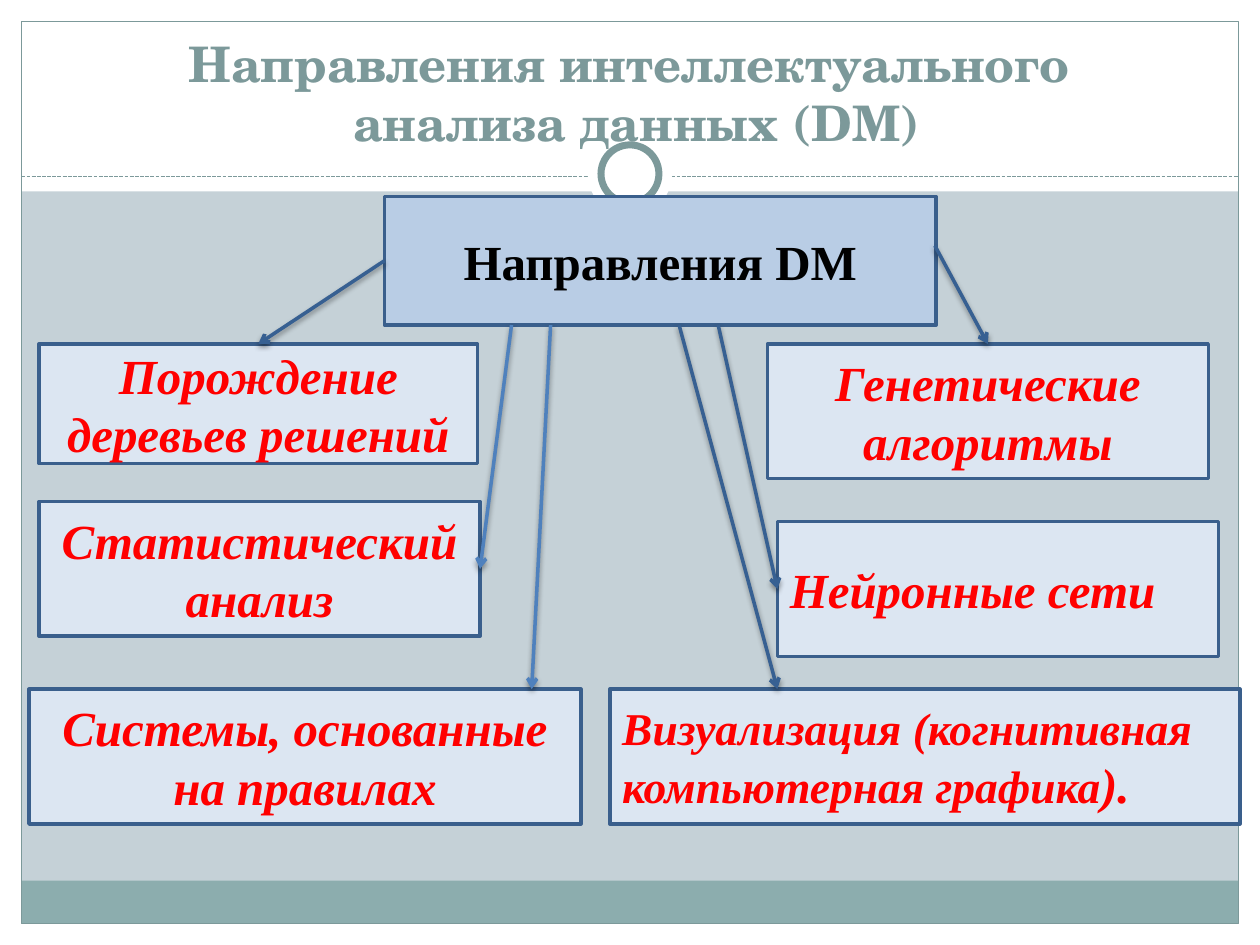
from dataclasses import dataclass

from lxml import etree
from pptx import Presentation, util as u
from pptx.dml.color import RGBColor
from pptx.enum import dml, shapes, text
from pptx.oxml.ns import qn

COLUMNS, ROWS = 10, 7.5
TOP, LEFT, BOTTOM, RIGHT = range(4)
CENTER, START = text.PP_ALIGN.CENTER, text.PP_ALIGN.LEFT


@dataclass(frozen=True)
class Theme:
    page: str = "C5D1D7"
    paper: str = "FFFFFF"
    band: str = "8CADAE"
    accent: str = "7C999A"
    hub: str = "B9CDE5"
    branch: str = "DCE6F2"
    outline: str = "3A5F8C"
    arrow: str = "376092"
    light_arrow: str = "4F81BD"
    shadow: str = "000000"
    hub_text: str = "000000"
    branch_text: str = "FF0000"
    title_font: str = "TeX Gyre Schola"
    body_font: str = "Times New Roman"
    size: float = 28
    small_size: float = 26
    hairline: float = 0.75
    stroke: float = 2
    ring: float = 4


THEME = Theme()


def grid(*lengths):
    return [u.Inches(length) for length in lengths]


def rgb(value):
    return RGBColor.from_string(value)


def set_line(line, color, width):
    line.color.rgb = rgb(color)
    line.width = u.Pt(width)


def add_panel(slide, area, fill=None, line=None, width=THEME.hairline,
              kind=shapes.MSO_SHAPE.RECTANGLE):
    panel = slide.shapes.add_shape(kind, *grid(*area))
    panel.shadow.inherit = False
    if fill:
        panel.fill.solid()
        panel.fill.fore_color.rgb = rgb(fill)
    else:
        panel.fill.background()
    if line:
        set_line(panel.line, line, width)
    else:
        panel.line.fill.background()
    return panel


def add_run(paragraph, words, font, color, size=THEME.size, italic=False):
    run = paragraph.add_run()
    run.text = words
    run.font.name = font
    run.font.size = u.Pt(size)
    run.font.bold = True
    run.font.italic = italic
    run.font.color.rgb = rgb(color)


def start_text(shape, anchor, align):
    frame = shape.text_frame
    frame.word_wrap = True
    frame.vertical_anchor = anchor
    paragraph = frame.paragraphs[0]
    paragraph.alignment = align
    return paragraph


def add_box(slide, area, runs, fill=THEME.branch, color=THEME.branch_text,
            italic=True, align=CENTER):
    box = add_panel(slide, area, fill, THEME.outline, THEME.stroke)
    paragraph = start_text(box, text.MSO_ANCHOR.MIDDLE, align)
    for words, size in runs:
        add_run(paragraph, words, THEME.body_font, color, size, italic)
    return box


def add_line(slide, start, end, color, width):
    line = slide.shapes.add_connector(shapes.MSO_CONNECTOR.STRAIGHT,
                                      *grid(*start, *end))
    set_line(line.line, color, width)
    effects = etree.SubElement(line._element.spPr, qn("a:effectLst"))
    return line, effects


def add_arrow(slide, start, end, color=THEME.arrow, source=None, target=None):
    arrow, effects = add_line(slide, start, end, color, THEME.stroke)
    etree.SubElement(arrow.line._get_or_add_ln(), qn("a:tailEnd"), type="arrow")
    shadow = etree.SubElement(effects, qn("a:outerShdw"), blurRad=str(u.Pt(3.1)),
                              dist=str(u.Pt(1.6)), dir="5400000", rotWithShape="0")
    shade = etree.SubElement(shadow, qn("a:srgbClr"), val=THEME.shadow)
    etree.SubElement(shade, qn("a:alpha"), val="38000")
    if source:
        arrow.begin_connect(*source)
    if target:
        arrow.end_connect(*target)


def add_backdrop(slide):
    slide.background.fill.solid()
    slide.background.fill.fore_color.rgb = rgb(THEME.page)
    margin = 0.17
    inner_width, inner_height = COLUMNS - 2 * margin, ROWS - 2 * margin
    for area in ((0, ROWS - margin, COLUMNS, margin), (0, 0, COLUMNS, 1.52),
                 (0, 0, margin, ROWS), (COLUMNS - margin, 0, margin, ROWS)):
        add_panel(slide, area, THEME.paper)
    add_panel(slide, (margin, 6.99, inner_width, 0.34), THEME.band)
    add_panel(slide, (margin, margin, inner_width, inner_height), line=THEME.accent)
    divider, _ = add_line(slide, (margin, 1.4), (COLUMNS - margin, 1.4),
                          THEME.accent, THEME.hairline)
    divider.line.dash_style = dml.MSO_LINE.SQUARE_DOT
    for diameter, line in ((0.67, None), (0.46, THEME.accent)):
        area = ((COLUMNS - diameter) / 2, 1.38 - diameter / 2, diameter, diameter)
        add_panel(slide, area, THEME.paper, line, THEME.ring, shapes.MSO_SHAPE.OVAL)


def add_title(slide, *lines):
    title = slide.shapes.add_textbox(*grid(0.33, 0.25, 9.33, 1))
    paragraph = start_text(title, text.MSO_ANCHOR.BOTTOM, CENTER)
    for index, words in enumerate(lines):
        if index:
            paragraph.add_line_break()
        add_run(paragraph, words, THEME.title_font, THEME.accent)


def add_directions(slide):
    size, small = THEME.size, THEME.small_size
    hub_bottom, last_row, height = 2.58, 5.47, 1.07
    hub = add_box(slide, (3.05, 1.56, 4.38, 1.02), [("Направления DM", size)],
                  THEME.hub, THEME.hub_text, italic=False)
    trees = add_box(slide, (0.31, 2.73, 3.48, 0.95),
                    [("Порождение деревьев решений", size)])
    statistics = add_box(slide, (0.31, 3.98, 3.5, height),
                         [("Статистический анализ", size)])
    add_box(slide, (0.23, last_row, 4.38, height),
            [("Системы, основанные на правилах", size)])
    genetics = add_box(slide, (6.09, 2.73, 3.5, height),
                       [("Генетические алгоритмы", size)])
    networks = add_box(slide, (6.17, 4.14, 3.5, height),
                       [("Нейронные сети", size)], align=START)
    add_box(slide, (4.84, last_row, 5, height),
            [("Визуализация (когнитивная компьютерная графика", small), (").", size)],
            align=START)

    add_arrow(slide, (3.05, 2.07), (2.05, 2.73),
              source=(hub, LEFT), target=(trees, TOP))
    add_arrow(slide, (4.06, hub_bottom), (3.81, 4.52), THEME.light_arrow,
              target=(statistics, RIGHT))
    add_arrow(slide, (4.37, hub_bottom), (4.22, last_row), THEME.light_arrow)
    add_arrow(slide, (7.42, 1.95), (7.84, 2.73), target=(genetics, TOP))
    add_arrow(slide, (5.7, hub_bottom), (6.17, 4.68), target=(networks, LEFT))
    add_arrow(slide, (5.39, hub_bottom), (6.17, last_row))


def main():
    deck = Presentation()
    deck.slide_width, deck.slide_height = grid(COLUMNS, ROWS)
    slide = deck.slides.add_slide(deck.slide_layouts[6])
    add_backdrop(slide)
    add_title(slide, "Направления интеллектуального", " анализа данных (DM)")
    add_directions(slide)
    deck.save("out.pptx")


if __name__ == "__main__":
    main()
